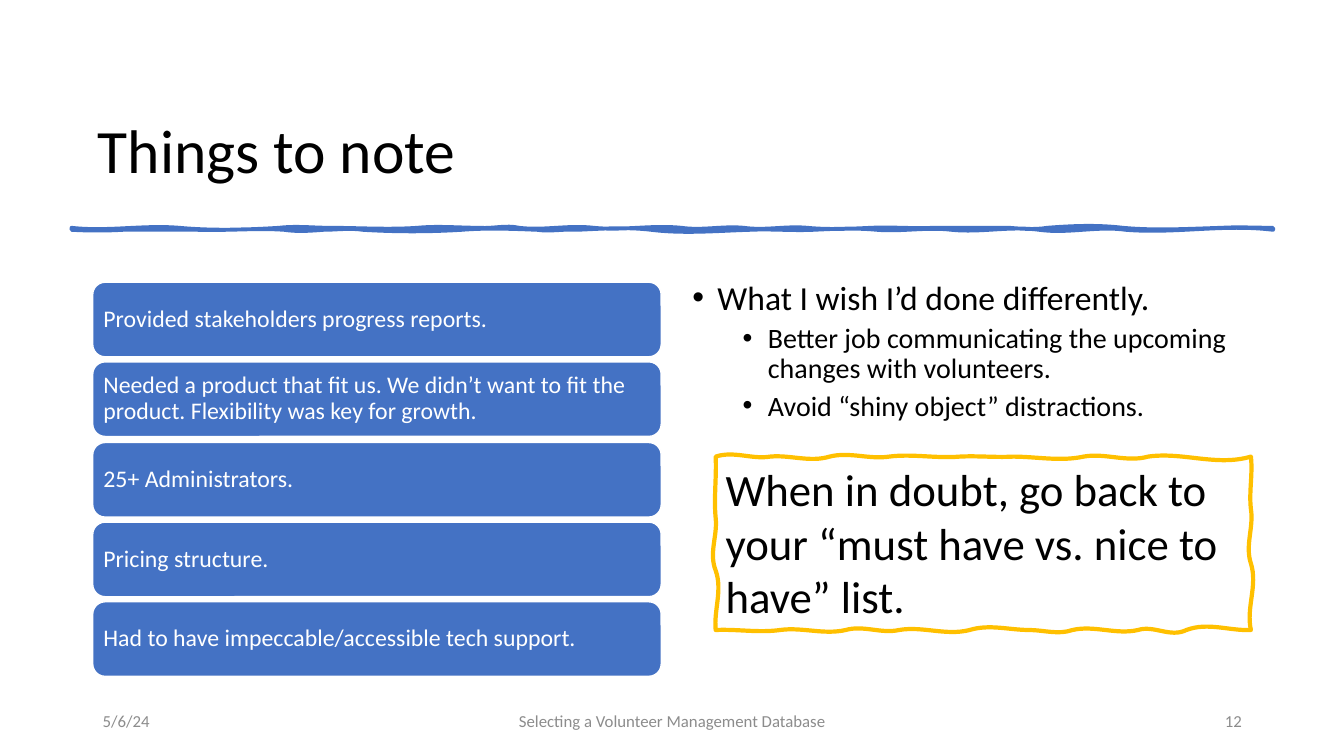
from dataclasses import dataclass

import pptx
import pptx.util
from pptx.dml.color import RGBColor
from pptx.enum.shapes import MSO_SHAPE
from pptx.enum.text import MSO_ANCHOR, PP_ALIGN
from pptx.oxml.ns import qn
from pptx.oxml.xmlchemy import OxmlElement

PX = 9144


@dataclass(frozen=True)
class Theme:
    font: str = "Calibri"
    blue: str = "4472C4"
    gold: str = "FFC000"
    black: str = "000000"
    white: str = "FFFFFF"
    gray: str = "8C8C8C"
    title: int = 44
    callout: int = 32
    body: int = 24
    detail: int = 20
    card: int = 17
    footer: int = 12


THEME = Theme()

NOTES = [
    "Provided stakeholders progress reports.",
    "Needed a product that fit us. We didn’t want to fit the product. Flexibility was key for growth.",
    "25+ Administrators.",
    "Pricing structure.",
    "Had to have impeccable/accessible tech support.",
]
BULLETS = [
    (0, "What I wish I’d done differently."),
    (1, "Better job communicating the upcoming changes with volunteers."),
    (1, "Avoid “shiny object” distractions."),
]
CALLOUT = "When in doubt, go back to your “must have vs. nice to have” list."
FOOTERS = [
    (92, 300, PP_ALIGN.LEFT, "5/6/24"),
    (442, 450, PP_ALIGN.CENTER, "Selecting a Volunteer Management Database"),
    (942, 300, PP_ALIGN.RIGHT, "12"),
]

RULE_LOWER = [
    (122, 1, 1), (196, 0, 0), (282, 1, -2), (321, 2, 1), (360, 0, -2), (458, 2, 2),
    (533, -2, -1), (572, 2, -1), (646, -1, -3), (744, 4, 1), (807, -1, 1), (870, -1, -2),
    (944, 2, -3), (1031, 3, -4), (1117, 4, -4), (1263, 4, -6),
]
RULE_UPPER = [
    (1212, 0, -1), (1114, 1, 3), (1039, -3, -2), (1001, 2, 1), (926, 0, 0), (864, 1, -1),
    (801, 1, 2), (738, -2, 3), (676, -2, 3), (589, -3, 3), (515, -3, 3), (476, -3, 1),
    (414, 0, -2), (327, 2, 0), (277, 0, -2), (178, 2, 3), (71, -3, 4),
]
FRAME_TOP = [
    (764, -6, 3), (823, -2, 6), (882, -5, 3), (952, -3, 2),
    (1005, -1, 1), (1075, 0, 5), (1139, -4, 6), (1241, -5, 10),
]
FRAME_RIGHT = [(505, 2, -2), (559, 3, -6), (625, 7, -5)]
FRAME_BOTTOM = [
    (1177, 1, -8), (1129, 8, -5), (1064, 5, -5), (1021, 5, 0), (962, 0, -6),
    (892, 6, -4), (839, 4, -5), (774, 5, -3), (710, 3, -1),
]
FRAME_LEFT = [(566, -2, 7), (514, -7, 2), (453, -2, 1)]


def px(*values):
    return [round(v * PX) for v in values]


def rgb(color):
    return RGBColor.from_string(color)


def wavy_edge(start, base, bends, vertical=False):
    curves = []
    for end, first, second in bends:
        third = (end - start) / 3
        curve = [(start + third, base + first), (end - third, base + second), (end, base)]
        curves.append([(b, a) for a, b in curve] if vertical else curve)
        start = end
    return curves


def path_point(sp, point):
    x, y = px(*point)
    pt = OxmlElement("a:pt")
    pt.set("x", str(x - sp.left))
    pt.set("y", str(y - sp.top))
    return pt


def add_outline(s, start, curves, color, width, fill=None):
    builder = s.shapes.build_freeform(*px(*start))
    builder.add_line_segments([px(*curve[-1]) for curve in curves], close=True)
    sp = builder.convert_to_shape()
    for line, curve in zip(list(sp._element.iter(qn("a:lnTo"))), curves):
        bezier = OxmlElement("a:cubicBezTo")
        for point in curve:
            bezier.append(path_point(sp, point))
        line.getparent().replace(line, bezier)
    paint(sp, fill, color, width)
    return sp


def paint(sp, fill, line, width):
    sp.shadow.inherit = False
    if fill:
        sp.fill.solid()
        sp.fill.fore_color.rgb = rgb(fill)
    else:
        sp.fill.background()
    sp.line.color.rgb = rgb(line)
    sp.line.width = pptx.util.Pt(width)


def set_frame(tf, anchor, insets=(10, 5, 10, 5)):
    tf.word_wrap = True
    tf.vertical_anchor = anchor
    tf.margin_left, tf.margin_top, tf.margin_right, tf.margin_bottom = px(*insets)


def write(p, text, size, color, align=PP_ALIGN.LEFT, spacing=1.0):
    p.text = text
    p.alignment = align
    p.line_spacing = spacing
    for r in p.runs:
        r.font.name = THEME.font
        r.font.size = pptx.util.Pt(size)
        r.font.color.rgb = rgb(color)


def set_bullet(p, indent, hanging):
    pPr = p._p.get_or_add_pPr()
    pPr.set("marL", str(indent * PX))
    pPr.set("indent", str(-hanging * PX))
    font = OxmlElement("a:buFont")
    font.set("typeface", "Arial")
    bullet = OxmlElement("a:buChar")
    bullet.set("char", "•")
    pPr.append(font)
    pPr.append(bullet)


def set_title(s, text):
    sp = s.shapes.title
    sp.left, sp.top, sp.width, sp.height = px(87, 80, 1150, 145)
    set_frame(sp.text_frame, MSO_ANCHOR.MIDDLE)
    write(sp.text_frame.paragraphs[0], text, THEME.title, THEME.black, spacing=0.9)


def add_card(s, top, text):
    sp = s.shapes.add_shape(MSO_SHAPE.ROUNDED_RECTANGLE, *px(92, top, 564, 74))
    paint(sp, THEME.blue, THEME.white, 1)
    set_frame(sp.text_frame, MSO_ANCHOR.MIDDLE, (7, 7, 7, 7))
    write(sp.text_frame.paragraphs[0], text, THEME.card, THEME.white, spacing=0.9)


def add_bullets(s, items):
    tf = s.shapes.add_textbox(*px(677, 274, 567, 403)).text_frame
    set_frame(tf, MSO_ANCHOR.TOP)
    for i, (level, text) in enumerate(items):
        p = tf.add_paragraph() if i else tf.paragraphs[0]
        size = THEME.detail if level else THEME.body
        write(p, text, size, THEME.black, spacing=0.9)
        p.level = level
        p.space_before = pptx.util.Pt(5 if level else 10)
        set_bullet(p, 25 + 50 * level, 25)


def add_callout(s, text):
    curves = (
        wavy_edge(710, 453, FRAME_TOP)
        + wavy_edge(453, 1241, FRAME_RIGHT, vertical=True)
        + wavy_edge(1241, 625, FRAME_BOTTOM)
        + wavy_edge(625, 710, FRAME_LEFT, vertical=True)
    )
    sp = add_outline(s, (710, 453), curves, THEME.gold, 3)
    set_frame(sp.text_frame, MSO_ANCHOR.TOP)
    write(sp.text_frame.paragraphs[0], text, THEME.callout, THEME.black)


def add_footer(s, left, width, align, text):
    tf = s.shapes.add_textbox(*px(left, 695, width, 40)).text_frame
    set_frame(tf, MSO_ANCHOR.MIDDLE)
    write(tf.paragraphs[0], text, THEME.footer, THEME.gray, align)


def add_rule(s):
    lower = wavy_edge(71, 228, RULE_LOWER)
    end = [[(1263, 227), (1263, 227), (1263, 226)]]
    upper = wavy_edge(1263, 226, RULE_UPPER)
    add_outline(s, (71, 228), lower + end + upper, THEME.blue, 2.75, THEME.blue)


def main():
    prs = pptx.Presentation()
    prs.slide_width = pptx.util.Pt(960)
    prs.slide_height = pptx.util.Pt(540)
    s = prs.slides.add_slide(prs.slide_layouts[5])
    add_rule(s)
    set_title(s, "Things to note")
    for i, note in enumerate(NOTES):
        add_card(s, 280 + (i * 317 + 2) // 4, note)
    add_bullets(s, BULLETS)
    add_callout(s, CALLOUT)
    for footer in FOOTERS:
        add_footer(s, *footer)
    prs.save("out.pptx")


if __name__ == "__main__":
    main()
